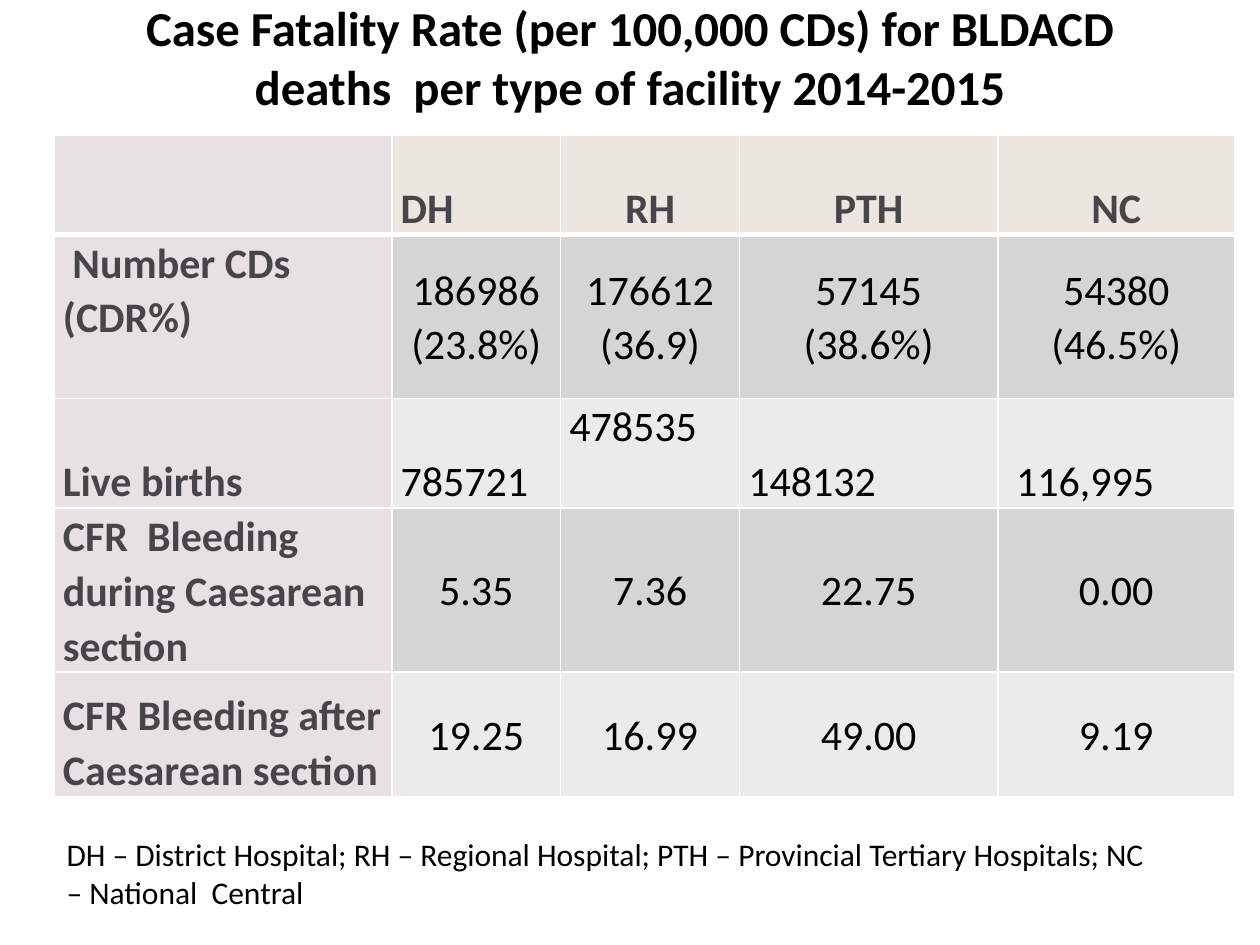
from dataclasses import dataclass

from lxml.etree import SubElement
from pptx import Presentation
from pptx.dml.color import RGBColor
from pptx.enum.text import MSO_ANCHOR, PP_ALIGN
from pptx.oxml.ns import qn
from pptx.util import Inches, Pt

SLIDE_W, SLIDE_H = Inches(10), Inches(7.5)
FONT = "Calibri"
BLACK = RGBColor(0x00, 0x00, 0x00)
WHITE = RGBColor(0xFF, 0xFF, 0xFF)
LABEL_TEXT = RGBColor(0x46, 0x46, 0x4A)
LABEL_FILL = RGBColor(0xE8, 0xE1, 0xE3)
HEADER_FILL = RGBColor(0xEB, 0xE6, 0xE0)
BANDS = (RGBColor(0xD5, 0xD5, 0xD6), RGBColor(0xEB, 0xEB, 0xEB))

LEFT, CENTER = PP_ALIGN.LEFT, PP_ALIGN.CENTER
TOP, MIDDLE, BOTTOM = MSO_ANCHOR.TOP, MSO_ANCHOR.MIDDLE, MSO_ANCHOR.BOTTOM


@dataclass
class Row:
    height: float
    texts: tuple
    align: PP_ALIGN = CENTER
    anchor: MSO_ANCHOR = MIDDLE


COL_WIDTHS = (2.68, 1.34, 1.42, 2.05, 1.88)
ROWS = (
    Row(0.79, ("", "DH", "RH", "PTH", "NC"), anchor=BOTTOM),
    Row(1.3, (" Number CDs\n(CDR%)", "186986 (23.8%)", "176612 (36.9)",
              "57145 (38.6%)", "54380 (46.5%)")),
    Row(0.87, ("Live births", "785721", "478535", "148132", " 116,995"), LEFT, BOTTOM),
    Row(1.3, ("CFR  Bleeding during Caesarean section", "5.35", "7.36", "22.75", "0.00")),
    Row(0.99, ("CFR Bleeding after\nCaesarean section", "19.25", "16.99", "49.00", "9.19")),
)
# Cells that depart from the rule of their row: (row, column)
ALIGN_AT = {(0, 1): LEFT}
ANCHOR_AT = {(1, 0): TOP, (2, 2): TOP}


def format_text(tf, size: float, color: RGBColor, bold: bool, align: PP_ALIGN,
                spacing: float = 1.0) -> None:
    for p in tf.paragraphs:
        p.alignment = align
        p.line_spacing = spacing
        for r in p.runs:
            r.font.name = FONT
            r.font.size = Pt(size)
            r.font.bold = bold
            r.font.color.rgb = color


def add_text(s, text: str, x: float, y: float, w: float, h: float, size: float,
             bold: bool = False, align: PP_ALIGN = LEFT, anchor: MSO_ANCHOR = TOP) -> None:
    """Add a text box placed by shares of the slide's size."""
    sp = s.shapes.add_textbox(int(SLIDE_W * x), int(SLIDE_H * y),
                              int(SLIDE_W * w), int(SLIDE_H * h))
    tf = sp.text_frame
    tf.word_wrap = True
    tf.vertical_anchor = anchor
    tf.text = text
    format_text(tf, size, BLACK, bold, align)


def set_borders(cell, widths: dict) -> None:
    tc_pr = cell._tc.get_or_add_tcPr()
    for i, (side, width) in enumerate(widths.items()):
        ln = SubElement(tc_pr, qn(f"a:ln{side}"), w=str(Pt(width)))
        SubElement(SubElement(ln, qn("a:solidFill")), qn("a:srgbClr"), val=str(WHITE))
        tc_pr.insert(i, ln)


def fill_cell(cell, row: Row, i: int, j: int) -> None:
    is_label = i == 0 or j == 0
    cell.margin_left = cell.margin_right = Inches(0.07)
    cell.margin_top = cell.margin_bottom = 0
    cell.vertical_anchor = ANCHOR_AT.get((i, j), BOTTOM if j == 0 else row.anchor)
    cell.fill.solid()
    if j == 0:
        cell.fill.fore_color.rgb = LABEL_FILL
    else:
        cell.fill.fore_color.rgb = HEADER_FILL if i == 0 else BANDS[(i - 1) % 2]
    cell.text_frame.text = row.texts[j]
    align = ALIGN_AT.get((i, j), LEFT if j == 0 else row.align)
    format_text(cell.text_frame, 24, LABEL_TEXT if is_label else BLACK, is_label, align, 1.07)
    set_borders(cell, {"L": 1, "R": 1, "T": 3 if i == 1 else 1, "B": 3 if i == 0 else 1})


def add_rate_table(s, x: float, y: float) -> None:
    heights = [row.height for row in ROWS]
    table = s.shapes.add_table(
        len(ROWS), len(COL_WIDTHS), int(SLIDE_W * x), int(SLIDE_H * y),
        Inches(sum(COL_WIDTHS)), Inches(sum(heights))).table
    for col, width in zip(table.columns, COL_WIDTHS):
        col.width = Inches(width)
    for i, row in enumerate(ROWS):
        table.rows[i].height = Inches(row.height)
        for j in range(len(COL_WIDTHS)):
            fill_cell(table.cell(i, j), row, i, j)


def main() -> None:
    prs = Presentation()
    prs.slide_width, prs.slide_height = SLIDE_W, SLIDE_H
    s = prs.slides.add_slide(prs.slide_layouts[6])

    # Title
    add_text(s, "Case Fatality Rate (per 100,000 CDs) for BLDACD deaths  "
                "per type of facility 2014-2015",
             0.05, 0, 0.9, 0.12, 27.9, bold=True, align=CENTER, anchor=MIDDLE)
    # Rates by facility type
    add_rate_table(s, 0.043, 0.143)
    # Abbreviations
    add_text(s, "DH – District Hospital; RH – Regional Hospital; "
                "PTH – Provincial Tertiary Hospitals; NC – National  Central",
             0.043, 0.877, 0.89, 0.095, 18)

    prs.save("out.pptx")


if __name__ == "__main__":
    main()
